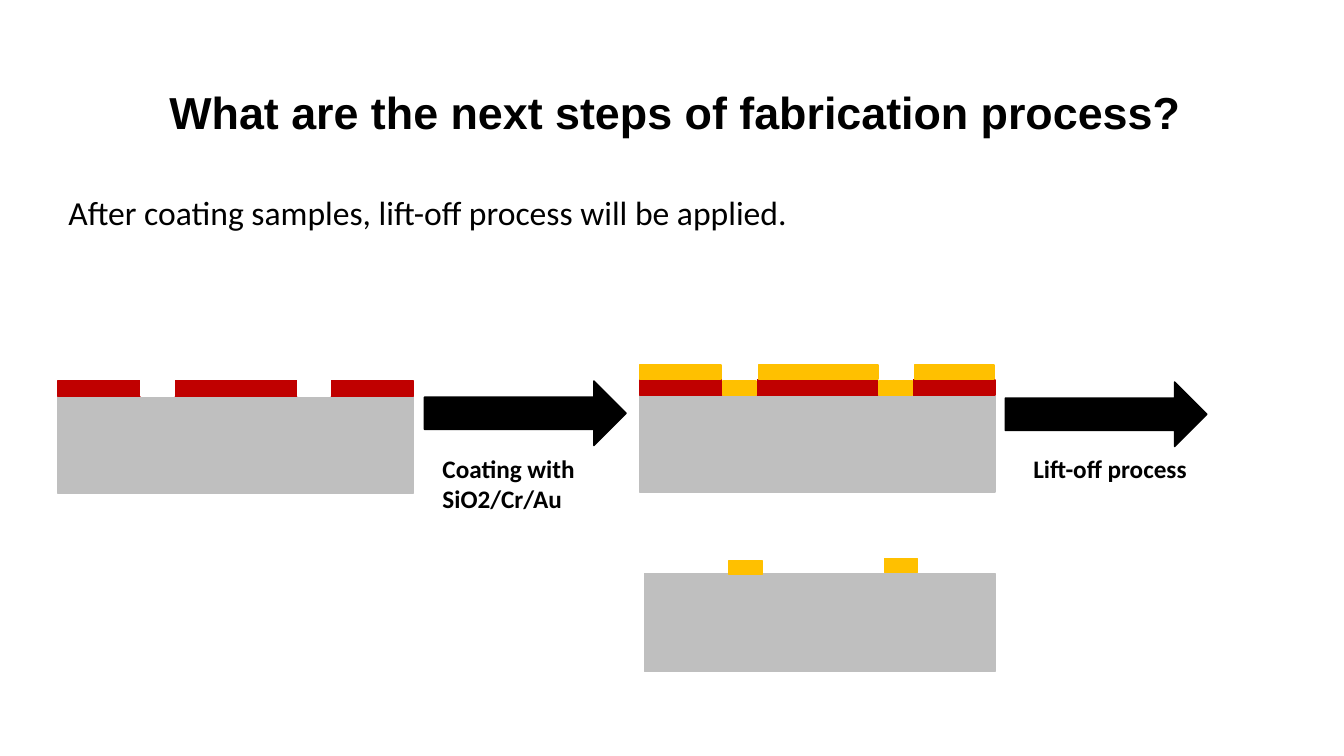
from pptx import Presentation
from pptx.dml.color import RGBColor
from pptx.enum.shapes import MSO_SHAPE
from pptx.enum.text import MSO_AUTO_SIZE, PP_ALIGN
from pptx.util import Inches, Pt

HUES = {"ink": "000000", "base": "BFBFBF", "mask": "C00000", "gap": "FFFFFF", "gold": "FFC000"}

TITLE = "What are the next steps of fabrication process?"
LEAD = "After coating samples, lift-off process will be applied."
STEPS = [
    ("Coating with SiO2/Cr/Au", (42.1, 37.8), (42.9, 44.5, 16.7, 7.1)),
    ("Lift-off process", (99.7, 37.9), (101.5, 44.5, 19.8, 4)),
]
ARROW = (20, 6.4)

COLS, ROWS = 133.3, 75
WIDE, THICK = 35.3, 9.5
SLOTS = (8.3, 23.8)
SLOT = 3.3
FILM = 1.4

MASKED = [("base", (0, 0, WIDE, THICK)), ("mask", (0, -1.6, WIDE, 1.5))]
MASKED += [("gap", (x, -4.1, SLOT, 4)) for x in SLOTS]
COATED = MASKED + [("gold", (x, -1.5, SLOT, FILM)) for x in SLOTS]
COATED += [("gold", (x, -3.1, w, FILM)) for x, w in ((0, 8.1), (11.8, 11.9), (27.3, 7.9))]
LIFTED = [
    ("base", (0, 0, 34.8, 9.7)),
    ("gold", (8.4, -1.3, SLOT, FILM)),
    ("gold", (23.8, -1.5, SLOT, FILM)),
]
SAMPLES = [((5.7, 39.4), MASKED), ((63.4, 39.3), COATED), ((63.9, 56.9), LIFTED)]

deck = Presentation()
deck.slide_width, deck.slide_height = Inches(13.33), Inches(7.5)
slide = deck.slides.add_slide(deck.slide_layouts[6])


def place(box):
    x, y, w, h = box
    col, row = deck.slide_width / COLS, deck.slide_height / ROWS
    return [round(n) for n in (x * col, y * row, w * col, h * row)]


def draw(host, kind, box, hue):
    part = host.add_shape(kind, *place(box))
    part.shadow.inherit = False
    tint = RGBColor.from_string(HUES[hue])
    part.fill.solid()
    part.fill.fore_color.rgb = tint
    part.line.color.rgb = tint
    part.line.width = Pt(1)


def write(text, box, size=18, font="Calibri", bold=False, align=PP_ALIGN.LEFT):
    frame = slide.shapes.add_textbox(*place(box)).text_frame
    frame.word_wrap = True
    frame.auto_size = MSO_AUTO_SIZE.SHAPE_TO_FIT_TEXT
    para = frame.paragraphs[0]
    para.alignment = align
    run = para.add_run()
    run.text = text
    run.font.size, run.font.name, run.font.bold = Pt(size), font, bold
    run.font.color.rgb = RGBColor.from_string(HUES["ink"])


write(TITLE, (12.7, 7.9, 108.6, 6.4), size=32, font="Arial", bold=True, align=PP_ALIGN.CENTER)
write(LEAD, (5.8, 18.5, 123.2, 5), size=24)

for (left, top), layers in SAMPLES:
    group = slide.shapes.add_group_shape()
    for hue, (x, y, w, h) in layers:
        draw(group.shapes, MSO_SHAPE.RECTANGLE, (left + x, top + y, w, h), hue)

for label, spot, box in STEPS:
    draw(slide.shapes, MSO_SHAPE.RIGHT_ARROW, spot + ARROW, "ink")
    write(label, box, bold=True)

deck.save("out.pptx")
